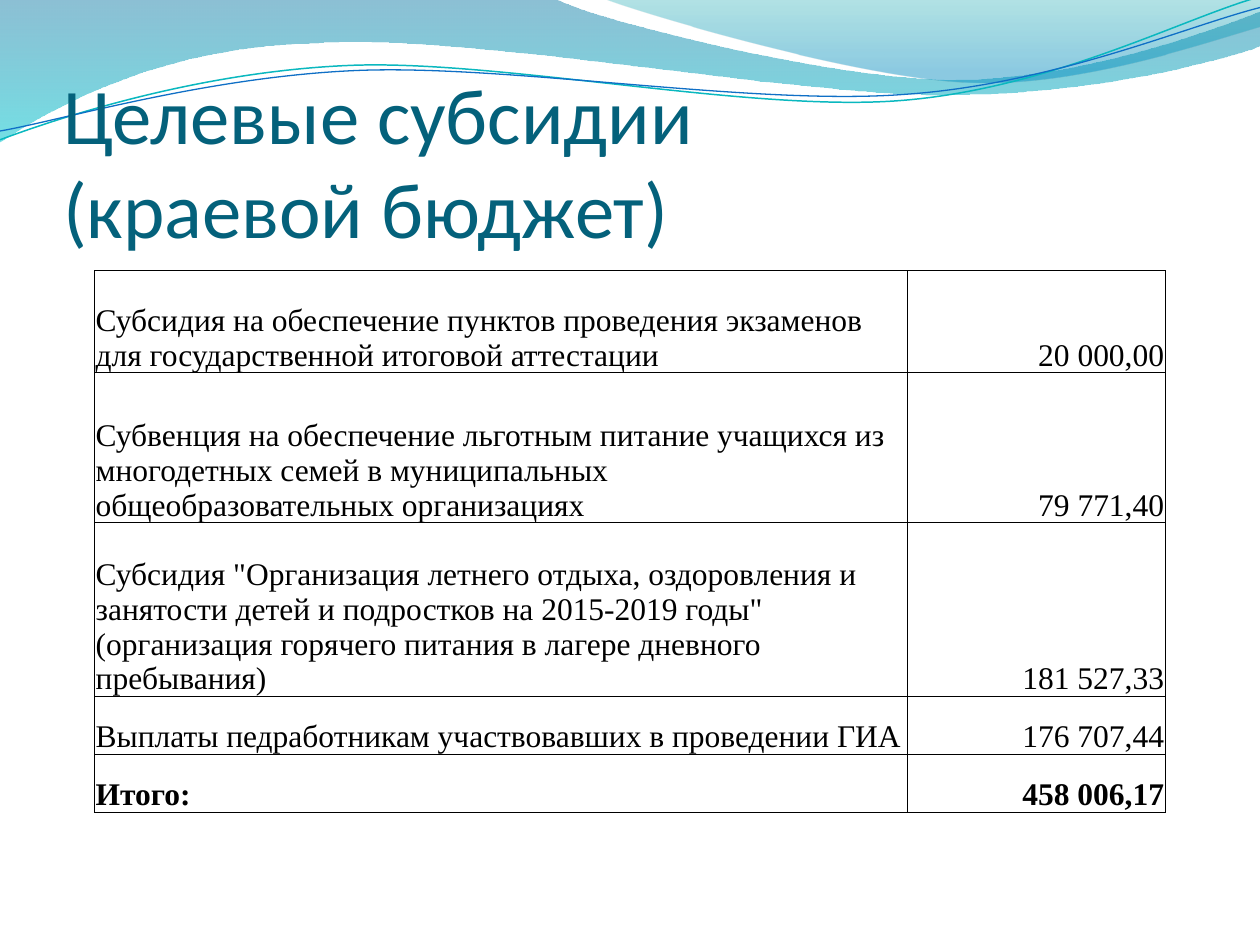
import dataclasses
from typing import Optional

import lxml.etree
import pptx
import pptx.dml.color
import pptx.enum.text
import pptx.oxml.ns
import pptx.util

Inches = pptx.util.Inches
Point = tuple[float, float]


@dataclasses.dataclass(frozen=True)
class Theme:
    title_font: str = "Calibri"
    table_font: str = "Times New Roman"
    title_size: int = 45
    table_size: int = 18
    title_color: str = "04617B"
    text_color: str = "000000"
    border_points: float = 0.5


@dataclasses.dataclass(frozen=True)
class Stop:
    position: float
    color: str
    opacity: int


@dataclasses.dataclass(frozen=True)
class Wave:
    """Each segment holds one end point (line) or three Bezier points (curve)."""
    start: Point
    segments: list[tuple[Point, ...]]
    stops: tuple[Stop, ...] = ()
    line_color: Optional[str] = None
    line_points: float = 0


@dataclasses.dataclass(frozen=True)
class Subsidy:
    name: str
    amount: str
    height: float
    bold: bool = False


THEME = Theme()

WAVES = [
    Wave((0, 0), [
        ((4.4, -0.01),),
        ((4.76, 0.17), (6.64, 0.63), (7.58, 0.63)),
        ((8.53, 0.63), (9.58, 0.26), (10, 0.09)),
        ((10.01, 0.36),),
        ((9.83, 0.44), (8.7, 0.76), (7.46, 0.75)),
        ((6.22, 0.75), (3.82, 0.28), (2.57, 0.34)),
        ((1.29, 0.36), (0.46, 0.83), (-0.01, 1.13)),
        ((0, 0),),
    ], stops=(Stop(0, "0074A1", 45), Stop(1, "00C6CF", 55))),
    Wave((4.79, -0.01), [
        ((5.09, 0.11), (6.82, 0.62), (7.69, 0.65)),
        ((8.56, 0.69), (9.61, 0.32), (10, 0.21)),
        ((10, 0),),
        ((4.79, -0.01),),
    ], stops=(Stop(0, "00A1A9", 30), Stop(0.8, "008BBF", 45))),
    Wave((0, 1.11), [
        ((0.48, 0.93), (1.58, 0.57), (2.77, 0.52)),
        ((3.95, 0.47), (5.93, 0.89), (7.13, 0.8)),
        ((8.33, 0.71), (9.38, 0.15), (9.98, -0.02)),
    ], line_color="0AB8BF", line_points=0.85),
    Wave((0, 1.04), [
        ((0.47, 0.96), (1.64, 0.61), (2.83, 0.56)),
        ((4.03, 0.51), (5.97, 0.84), (7.17, 0.75)),
        ((8.36, 0.67), (9.41, 0.21), (10, 0.06)),
    ], line_color="0F6FC6", line_points=0.75),
]

SUBSIDIES = [
    Subsidy("Субсидия на обеспечение пунктов проведения экзаменов для "
            "государственной итоговой аттестации", "20 000,00", 0.81),
    Subsidy("Субвенция на обеспечение льготным питание учащихся из многодетных семей "
            "в муниципальных общеобразовательных организациях", "79 771,40", 1.19),
    Subsidy('Субсидия "Организация летнего отдыха, оздоровления и занятости детей и '
            'подростков на 2015-2019 годы" (организация горячего питания в лагере '
            'дневного пребывания)', "181 527,33", 1.38),
    Subsidy("Выплаты педработникам участвовавших в проведении ГИА", "176 707,44", 0.46),
    Subsidy("Итого:", "458 006,17", 0.46, bold=True),
]
COLUMN_WIDTHS = [0.32, 6.45, 2.05, 0.39]
EMPTY_ROW_HEIGHT = 0.46
FIRST_ROW, FIRST_COLUMN = 2, 1
NO_STYLE = "{2D5ABB26-0587-4C30-8999-92F81FD0307C}"


def rgb(color: str) -> pptx.dml.color.RGBColor:
    return pptx.dml.color.RGBColor.from_string(color)


def add_element(parent, tag: str, **attributes: str):
    return lxml.etree.SubElement(parent, pptx.oxml.ns.qn(tag), attributes)


def bend_segments(shape, segments: list[tuple[Point, ...]]) -> None:
    """Join each three lines that stand for a curve into one Bezier segment."""
    lines = iter(list(shape._element.iter(pptx.oxml.ns.qn("a:lnTo"))))
    for segment in segments:
        first, *others = [next(lines) for _ in segment]
        if others:
            first.tag = pptx.oxml.ns.qn("a:cubicBezTo")
            for line in others:
                first.append(line[0])
                line.getparent().remove(line)


def add_wave(slide, wave: Wave) -> None:
    builder = slide.shapes.build_freeform(Inches(wave.start[0]), Inches(wave.start[1]))
    points = [(Inches(x), Inches(y)) for segment in wave.segments for x, y in segment]
    builder.add_line_segments(points, close=bool(wave.stops))
    shape = builder.convert_to_shape()
    bend_segments(shape, wave.segments)
    shape.shadow.inherit = False
    if wave.stops:
        shape.line.fill.background()
        shape.fill.gradient()
        shape.fill.gradient_angle = 270
        for target, stop in zip(shape.fill.gradient_stops, wave.stops):
            target.position = stop.position
            target.color.rgb = rgb(stop.color)
        colors = shape._element.spPr.iter(pptx.oxml.ns.qn("a:srgbClr"))
        for color, stop in zip(colors, wave.stops):
            add_element(color, "a:alpha", val=str(stop.opacity * 1000))
    else:
        shape.fill.background()
        shape.line.color.rgb = rgb(wave.line_color)
        shape.line.width = pptx.util.Pt(wave.line_points)


def format_run(run, font: str, size: int, color: str, bold: bool = False) -> None:
    run.font.name = font
    run.font.size = pptx.util.Pt(size)
    run.font.color.rgb = rgb(color)
    run.font.bold = bold


def fill_title(slide) -> None:
    title = slide.shapes.title
    title.left, title.top = Inches(0.5), Inches(0.77)
    title.width, title.height = Inches(9.08), Inches(1.25)
    frame = title.text_frame
    frame.auto_size = pptx.enum.text.MSO_AUTO_SIZE.NONE
    frame.vertical_anchor = pptx.enum.text.MSO_ANCHOR.BOTTOM
    frame.margin_left = frame.margin_right = frame.margin_bottom = 0
    frame.margin_top = Inches(0.05)
    paragraph = frame.paragraphs[0]
    paragraph.alignment = pptx.enum.text.PP_ALIGN.LEFT
    for index, text in enumerate(["Целевые субсидии ", "(краевой бюджет)"]):
        if index:
            paragraph.add_line_break()
        run = paragraph.add_run()
        run.text = text
        format_run(run, THEME.title_font, THEME.title_size, THEME.title_color)
    # Bring the title in front of the waves
    slide.shapes._spTree.append(title._element)


def is_filled(row: int, column: int) -> bool:
    return 0 <= row - FIRST_ROW < len(SUBSIDIES) and 0 <= column - FIRST_COLUMN < 2


def add_borders(cell, row: int, column: int) -> None:
    """Rule every side that touches a filled cell."""
    properties = cell._tc.get_or_add_tcPr()
    sides = {"a:lnL": (0, -1), "a:lnR": (0, 1), "a:lnT": (-1, 0), "a:lnB": (1, 0)}
    for tag, (down, right) in sides.items():
        if is_filled(row, column) or is_filled(row + down, column + right):
            width = pptx.util.Pt(THEME.border_points)
            line = add_element(properties, tag, w=str(int(width)))
            add_element(add_element(line, "a:solidFill"), "a:srgbClr", val=THEME.text_color)


def add_subsidy_table(slide) -> None:
    heights = [EMPTY_ROW_HEIGHT] * 2 + [s.height for s in SUBSIDIES] + [EMPTY_ROW_HEIGHT]
    frame = slide.shapes.add_table(len(heights), len(COLUMN_WIDTHS), Inches(0.43), Inches(1.23),
                                   Inches(sum(COLUMN_WIDTHS)), Inches(sum(heights)))
    table = frame.table
    table.first_row = table.horz_banding = False
    table._tbl.tblPr.find(pptx.oxml.ns.qn("a:tableStyleId")).text = NO_STYLE
    for column, width in zip(table.columns, COLUMN_WIDTHS):
        column.width = Inches(width)
    for row_index, height in enumerate(heights):
        table.rows[row_index].height = Inches(height)
        for column_index in range(len(COLUMN_WIDTHS)):
            cell = table.cell(row_index, column_index)
            add_borders(cell, row_index, column_index)
            cell.fill.background()
            if is_filled(row_index, column_index):
                fill_cell(cell, SUBSIDIES[row_index - FIRST_ROW], column_index > FIRST_COLUMN)


def fill_cell(cell, subsidy: Subsidy, is_amount: bool) -> None:
    cell.margin_left = cell.margin_right = cell.margin_top = Inches(0.01)
    cell.margin_bottom = 0
    cell.vertical_anchor = pptx.enum.text.MSO_ANCHOR.BOTTOM
    paragraph = cell.text_frame.paragraphs[0]
    alignment = pptx.enum.text.PP_ALIGN
    paragraph.alignment = alignment.RIGHT if is_amount else alignment.LEFT
    run = paragraph.add_run()
    run.text = subsidy.amount if is_amount else subsidy.name
    format_run(run, THEME.table_font, THEME.table_size, THEME.text_color, subsidy.bold)


def main() -> None:
    presentation = pptx.Presentation()
    presentation.slide_width, presentation.slide_height = Inches(10), Inches(7.5)
    slide = presentation.slides.add_slide(presentation.slide_layouts[5])
    for wave in WAVES:
        add_wave(slide, wave)
    fill_title(slide)
    add_subsidy_table(slide)
    presentation.save("out.pptx")


if __name__ == "__main__":
    main()
